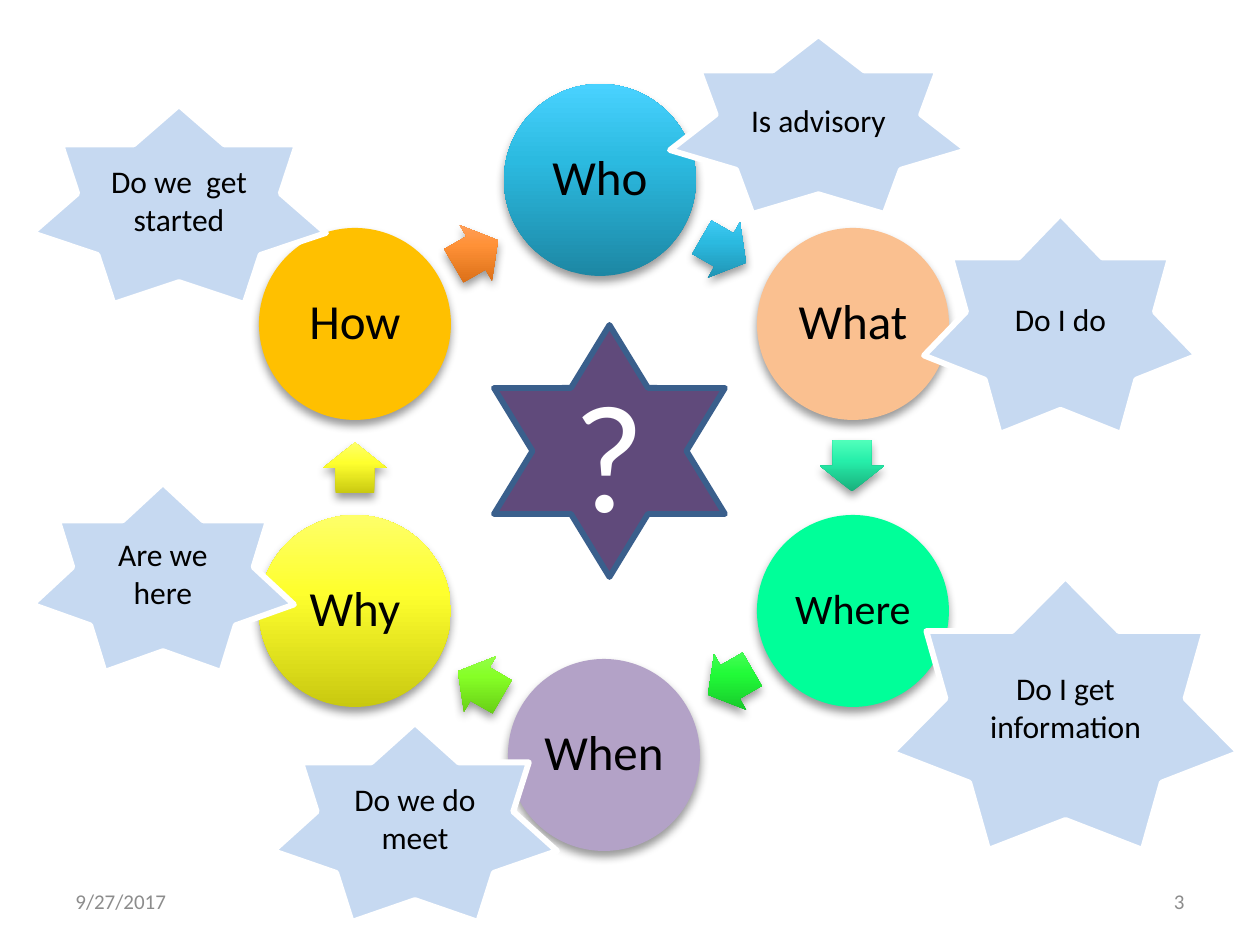
from lxml.etree import SubElement
from pptx import Presentation
from pptx.dml.color import RGBColor
from pptx.enum.shapes import MSO_SHAPE
from pptx.enum.text import MSO_ANCHOR, PP_ALIGN
from pptx.oxml.ns import qn
from pptx.util import Emu, Pt

SCALE = 914400 / 126
RING = 192
ARROW = (51, 64)

# word, size, centre, fill; several colours make a gradient from bottom to top
WORDS = [
    ("Who", 28, (600, 180), ["1D87A4", "2BBAE0", "49D2FF"]),
    ("What", 28, (853, 324), ["FAC090"]),
    ("Where", 24, (853, 611), ["00FF99"]),
    ("When", 28, (604, 755), ["B3A2C7"]),
    ("Why", 28, (355, 611), ["C9C910", "FEFF2E", "FEFF69"]),
    ("How", 28, (355, 324), ["FFC000"]),
]
ARROWS = [
    ((724, 250), ["1D87A4", "2BBAE0", "49D2FF"]),
    ((852, 466), ["19AE7B", "26EEAA", "51FFBB"]),
    ((730, 682), ["15B827", "21FB38", "59FF66"]),
    ((480, 684), ["60C112", "86FF26", "9CFF61"]),
    ((355, 468), ["C9C910", "FEFF2E", "FEFF69"]),
    ((476, 253), ["D1670F", "FF9137", "FFA770"]),
]
STARS = [
    ("Do I do", (924, 214, 273, 220)),
    ("Do I get information", (892, 577, 347, 273)),
    ("Do we do meet", (273, 723, 284, 199)),
    ("Is advisory", (670, 35, 297, 179)),
    ("Are we here", (32, 483, 262, 189)),
    ("Do we  get started", (32, 105, 294, 199)),
]


def px(n):
    return Emu(round(n * SCALE))


def rgb(code):
    return RGBColor.from_string(code)


def around(mid, wide, high):
    """Box of the given size centred on mid."""
    return mid[0] - wide / 2, mid[1] - high / 2, wide, high


class Page:
    font = "Calibri"
    ink = "000000"

    def __init__(self, slide):
        self.slide = slide

    def label(self, shape, text, size, color=ink, align=PP_ALIGN.CENTER):
        frame = shape.text_frame
        frame.word_wrap = True
        frame.vertical_anchor = MSO_ANCHOR.MIDDLE
        para = frame.paragraphs[0]
        para.alignment = align
        run = para.add_run()
        run.text = text
        run.font.name = self.font
        run.font.size = Pt(size)
        run.font.color.rgb = rgb(color)
        return frame

    def shape(self, kind, box, colors, line=None):
        shape = self.slide.shapes.add_shape(kind, *map(px, box))
        shape.shadow.inherit = False
        if len(colors) == 1:
            shape.fill.solid()
            shape.fill.fore_color.rgb = rgb(colors[0])
        else:
            self.blend(shape, colors)
        if line:
            shape.line.color.rgb = rgb(line)
            shape.line.width = Pt(3.35)
        else:
            shape.line.fill.background()
        return shape

    def blend(self, shape, colors):
        """Upward gradient that stays upright when the shape turns."""
        shape.fill.gradient()
        shape.fill.gradient_angle = 90
        grad = shape._element.spPr.find(qn("a:gradFill"))
        grad.set("rotWithShape", "0")
        stops = grad.find(qn("a:gsLst"))
        for stop in list(stops):
            stops.remove(stop)
        for place, color in zip((0, 60, 100), colors):
            stop = SubElement(stops, qn("a:gs"), pos=str(place * 1000))
            SubElement(stop, qn("a:srgbClr"), val=color)

    def shade(self, shape):
        """Soft shadow straight below the shape."""
        effects = shape._element.spPr.find(qn("a:effectLst"))
        outer = SubElement(effects, qn("a:outerShdw"), blurRad=str(int(Pt(5.2))),
                           dist=str(int(Pt(3))), dir="5400000", rotWithShape="0")
        color = SubElement(outer, qn("a:srgbClr"), val="000000")
        SubElement(color, qn("a:alpha"), val="40000")

    def disc(self, word, size, mid, colors):
        disc = self.shape(MSO_SHAPE.OVAL, around(mid, RING, RING), colors)
        self.shade(disc)
        frame = self.label(disc, word, size)
        frame.margin_left = frame.margin_right = px(5)
        frame.margin_top = frame.margin_bottom = px(5)
        frame.paragraphs[0].line_spacing = 0.9

    def arrow(self, mid, colors, turn):
        arrow = self.shape(MSO_SHAPE.RIGHT_ARROW, around(mid, *ARROW), colors)
        arrow.adjustments[0] = 0.6
        arrow.adjustments[1] = 0.5
        arrow.rotation = turn
        self.shade(arrow)

    def star(self, kind, text, box, size, fill, line, color=ink):
        star = self.shape(kind, box, [fill], line)
        self.label(star, text, size, color)

    def note(self, text, box, align):
        note = self.slide.shapes.add_textbox(*map(px, box))
        self.label(note, text, 12, "8C8C8C", align)


def main():
    deck = Presentation()
    deck.slide_width, deck.slide_height = px(1260), px(945)
    page = Page(deck.slides.add_slide(deck.slide_layouts[6]))

    for word in WORDS:
        page.disc(*word)
    for step, (mid, colors) in enumerate(ARROWS):
        page.arrow(mid, colors, 30 + 60 * step)

    page.note("9/27/2017", (63, 876, 294, 50), PP_ALIGN.LEFT)
    page.note("3", (903, 876, 294, 50), PP_ALIGN.RIGHT)

    for text, box in STARS:
        page.star(MSO_SHAPE.STAR_7_POINT, text, box, 18, "C6D9F1", "FFFFFF")
    page.star(MSO_SHAPE.STAR_6_POINT, "?", (494, 325, 231, 252), 88,
              "604A7B", "3A5F8C", "FFFFFF")
    deck.save("out.pptx")


if __name__ == "__main__":
    main()
